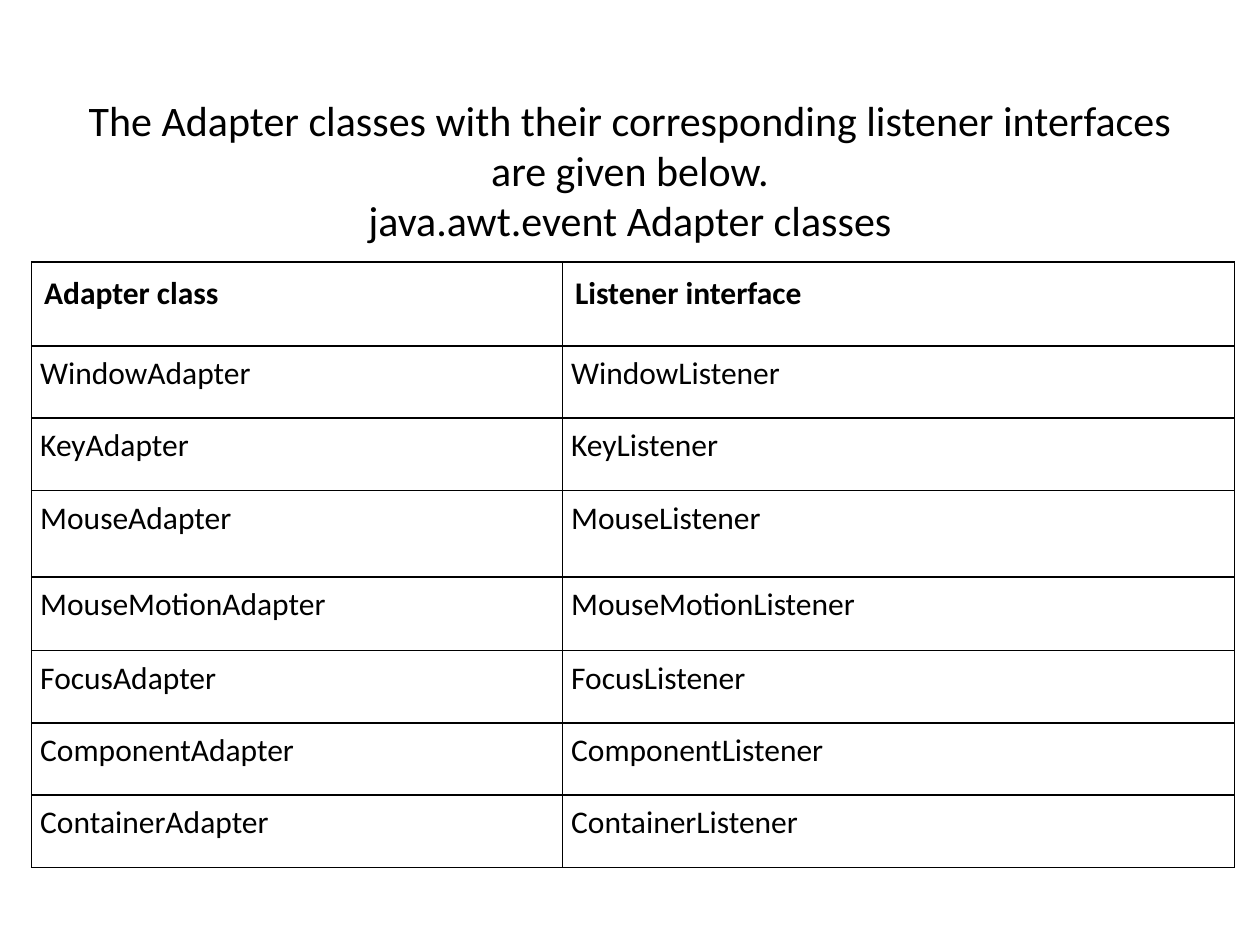
from typing import NamedTuple

from lxml import etree
from pptx import Presentation
from pptx.dml.color import RGBColor
from pptx.enum import text as t
from pptx.oxml import ns
from pptx.util import Pt

FONT = "Calibri"
BLACK = "000000"
LINES = (
    "The Adapter classes with their corresponding listener interfaces are given below.",
    "java.awt.event Adapter classes",
)
KINDS = ("Window", "Key", "Mouse", "MouseMotion", "Focus", "Component", "Container")
TALL = {"Mouse": 49.3, "MouseMotion": 42}
WIDTHS = (303.4, 384)


class Row(NamedTuple):
    words: tuple[str, str]
    height: float
    inset: float
    align: t.PP_ALIGN
    bold: bool


def color(code: str) -> RGBColor:
    return RGBColor.from_string(code)


def style(para, size: float, align: t.PP_ALIGN, bold: bool = False) -> None:
    para.alignment = align
    font = para.font
    font.name, font.size, font.bold = FONT, Pt(size), bold
    font.color.rgb = color(BLACK)


def border(cell, code: str, width: float) -> None:
    props = cell._tc.get_or_add_tcPr()
    for side in ("lnL", "lnR", "lnT", "lnB"):
        line = etree.SubElement(props, ns.qn(f"a:{side}"), w=str(Pt(width)))
        fill = etree.SubElement(line, ns.qn("a:solidFill"))
        etree.SubElement(fill, ns.qn("a:srgbClr"), val=code)


def draw_title(slide) -> None:
    box = slide.shapes.add_textbox(Pt(36), Pt(50), Pt(648), Pt(94))
    frame = box.text_frame
    frame.word_wrap = True
    frame.vertical_anchor = t.MSO_ANCHOR.MIDDLE
    frame.text = "\n".join(LINES)
    for para in frame.paragraphs:
        style(para, 24, t.PP_ALIGN.CENTER)


def draw_cell(cell, word: str, row: Row) -> None:
    cell.text = word
    cell.margin_left = cell.margin_right = Pt(row.inset)
    cell.margin_top = cell.margin_bottom = Pt(row.inset)
    style(cell.text_frame.paragraphs[0], 18, row.align, row.bold)
    border(cell, BLACK, 1)
    cell.fill.background()


def draw_table(slide, rows: list[Row]) -> None:
    high = sum(row.height for row in rows)
    frame = slide.shapes.add_table(
        len(rows), len(WIDTHS), Pt(18), Pt(149.8), Pt(sum(WIDTHS)), Pt(high)
    )
    table = frame.table
    table.first_row = table.horz_banding = False
    for col, width in zip(table.columns, WIDTHS):
        col.width = Pt(width)
    for line, row in zip(table.rows, rows):
        line.height = Pt(row.height)
        for cell, word in zip(line.cells, row.words):
            draw_cell(cell, word, row)


def main() -> None:
    deck = Presentation()
    deck.slide_width, deck.slide_height = Pt(720), Pt(540)
    slide = deck.slides.add_slide(deck.slide_layouts[6])
    draw_title(slide)
    head = Row(("Adapter class", "Listener interface"), 47.8, 7.2, t.PP_ALIGN.LEFT, True)
    body = [
        Row((f"{kind}Adapter", f"{kind}Listener"), TALL.get(kind, 41.4), 5,
            t.PP_ALIGN.JUSTIFY, False)
        for kind in KINDS
    ]
    draw_table(slide, [head, *body])
    deck.save("out.pptx")


if __name__ == "__main__":
    main()
